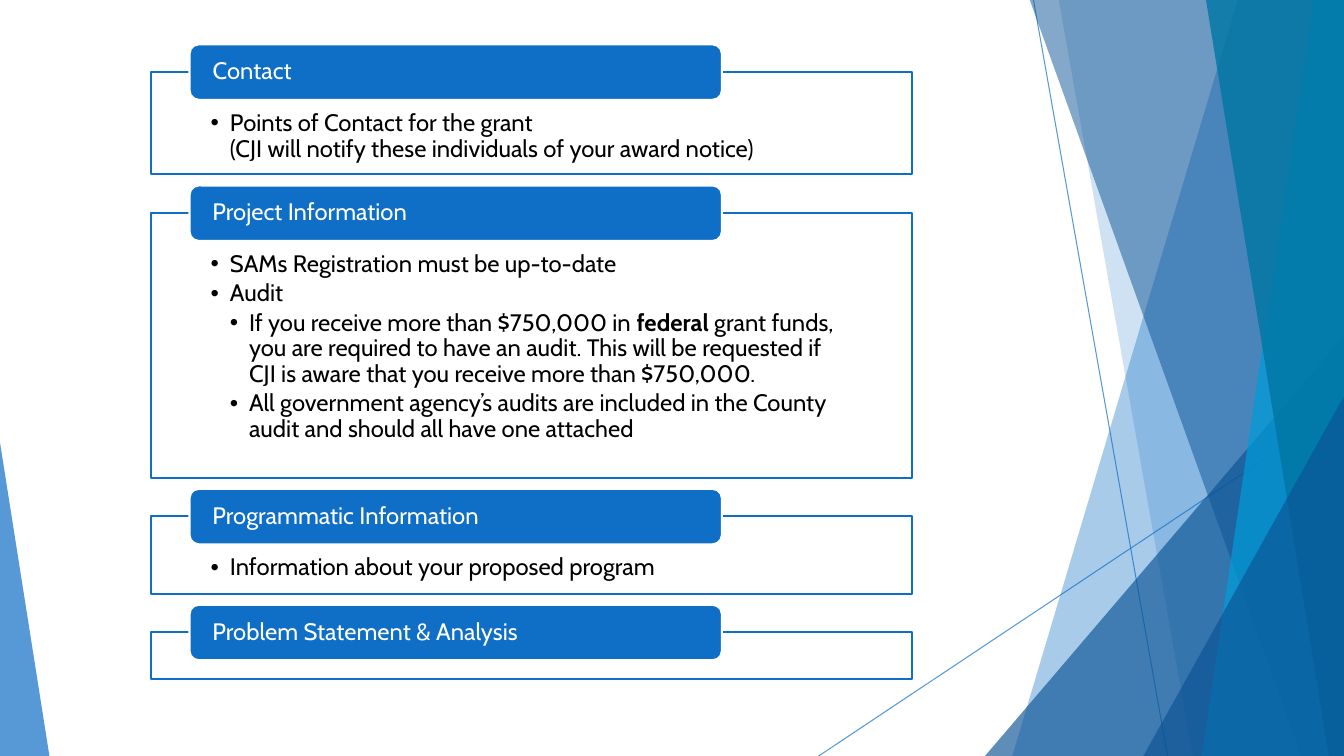
from dataclasses import dataclass
from typing import NamedTuple

from lxml.etree import SubElement as Sub
from pptx import Presentation
from pptx.dml.color import RGBColor as Rgb
from pptx.enum.shapes import MSO_CONNECTOR as Link, MSO_SHAPE as Form
from pptx.enum.text import MSO_ANCHOR as Anchor, MSO_AUTO_SIZE as Fit, PP_ALIGN as Align
from pptx.oxml.ns import qn
from pptx.util import Inches, Pt


@dataclass(frozen=True)
class Theme:
    font: str = "Cabin"
    size: float = 17
    blue: str = "0F6FC6"
    navy: str = "0B5394"
    cyan: str = "009DD9"
    teal: str = "0076A3"
    white: str = "FFFFFF"
    black: str = "000000"
    edge: float = 1.5
    thin: float = 0.75


class Ray(NamedTuple):
    start: tuple[float, float]
    end: tuple[float, float]


class Band(NamedTuple):
    top: float
    foot: float
    tone: str
    alpha: int


class Peak(NamedTuple):
    left: float
    top: float
    width: float
    lean: float
    tone: str
    alpha: int


class Item(NamedTuple):
    text: str
    level: int = 1


class Part(NamedTuple):
    head: str
    height: float
    items: tuple[Item, ...] = ()


THEME = Theme()
WIDE, HIGH = 13.33, 7.5
LEFT, SPAN = 1.5, 7.55
DROP, GAP, STEP = 0.27, 0.11, 0.19

RAYS = (Ray((10.25, 0), (11.58, HIGH)), Ray((WIDE, 4.03), (8.12, HIGH)))
ART = (
    Band(12.28, 10.04, THEME.blue, 36),
    Band(10.5, 11.83, THEME.blue, 20),
    Peak(9.77, 3.33, 3.56, 1, THEME.navy, 66),
    Band(10.21, 12.91, THEME.navy, 50),
    Band(13.03, 11.92, THEME.cyan, 70),
    Band(11.96, 13.18, THEME.teal, 80),
    Peak(11.34, 3.93, 1.99, 1, THEME.navy, 66),
    Peak(0, 4.39, 0.49, 0, THEME.blue, 70),
)
PARTS = (
    Part("Contact", 1.02, (
        Item("Points of Contact for the grant \n"
             "(CJI will notify these individuals of your award notice)"),
    )),
    Part("Project Information", 2.63, (
        Item("SAMs Registration must be up-to-date"),
        Item("Audit"),
        Item("If you receive more than $750,000 in *federal* grant funds, "
             "you are required to have an audit. This will be requested if "
             "CJI is aware that you receive more than $750,000.", 2),
        Item("All government agency’s audits are included in the County "
             "audit and should all have one attached", 2),
    )),
    Part("Programmatic Information", 0.77, (
        Item("Information about your proposed program"),
    )),
    Part("Problem Statement & Analysis", 0.47),
)


def fade(shape, alpha: int) -> None:
    tone = next(shape.element.spPr.iter(qn("a:srgbClr")))
    Sub(tone, qn("a:alpha"), val=str(alpha * 1000))


def place(shape, left: float, top: float, width: float, height: float) -> None:
    shape.left, shape.top = Inches(left), Inches(top)
    shape.width, shape.height = Inches(width), Inches(height)


def paint(shape, tone: str, alpha: int = 100, edge: str = "") -> None:
    shape.fill.solid()
    shape.fill.fore_color.rgb = Rgb.from_string(tone)
    if alpha < 100:
        fade(shape, alpha)
    if edge:
        shape.line.color.rgb = Rgb.from_string(edge)
        shape.line.width = Pt(THEME.edge)
    else:
        shape.line.fill.background()


def add_form(slide, form: Form, left: float, top: float, width: float, height: float):
    shape = slide.shapes.add_shape(
        form, Inches(left), Inches(top), Inches(width), Inches(height))
    shape.shadow.inherit = False
    return shape


def set_frame(shape, pads: tuple[float, ...], anchor: Anchor) -> None:
    frame = shape.text_frame
    frame.word_wrap = True
    frame.auto_size = Fit.NONE
    frame.vertical_anchor = anchor
    (frame.margin_left, frame.margin_top,
     frame.margin_right, frame.margin_bottom) = map(Inches, pads)


def write(para, text: str, *, tone: str, after: float, level: int = 0) -> None:
    para.alignment = Align.LEFT
    para.line_spacing = 0.9
    para.space_before = Pt(0)
    para.space_after = Pt(THEME.size * after)
    if level:
        para.level = level
        props = para._p.get_or_add_pPr()
        props.set("marL", str(Inches(STEP * level)))
        props.set("indent", str(-Inches(STEP)))
        Sub(props, qn("a:buFont"), typeface="Arial")
        Sub(props, qn("a:buChar"), char="•")
    for row, line in enumerate(text.split("\n")):
        if row:
            para.add_line_break()
        for place_no, chunk in enumerate(line.split("*")):
            run = para.add_run()
            run.text = chunk
            run.font.name = THEME.font
            run.font.size = Pt(THEME.size)
            run.font.bold = place_no % 2 == 1
            run.font.color.rgb = Rgb.from_string(tone)


def draw_ray(slide, ray: Ray) -> None:
    line = slide.shapes.add_connector(
        Link.STRAIGHT, *map(Inches, ray.start + ray.end))
    line.line.color.rgb = Rgb.from_string(THEME.blue)
    line.line.width = Pt(THEME.thin)
    fade(line, 70)
    Sub(line.element.spPr, qn("a:effectLst"))


def draw_band(slide, band: Band) -> None:
    pen = slide.shapes.build_freeform(Inches(band.top), Inches(-0.01))
    ends = ((WIDE, -0.01), (WIDE, HIGH), (band.foot, HIGH))
    pen.add_line_segments([(Inches(x), Inches(y)) for x, y in ends], close=True)
    shape = pen.convert_to_shape()
    shape.shadow.inherit = False
    paint(shape, band.tone, band.alpha)


def draw_peak(slide, peak: Peak) -> None:
    shape = add_form(slide, Form.ISOSCELES_TRIANGLE,
                     peak.left, peak.top, peak.width, HIGH - peak.top)
    shape.adjustments[0] = peak.lean
    paint(shape, peak.tone, peak.alpha)


def draw_part(slide, part: Part, top: float, title, bodies: list) -> None:
    area = (LEFT, top + DROP, SPAN, part.height)
    if part.items:
        box = bodies.pop(0)
        place(box, *area)
        set_frame(box, (0.59, 0.39, 0.59, 0.13), Anchor.TOP)
        for no, item in enumerate(part.items):
            para = box.text_frame.add_paragraph() if no else box.text_frame.paragraphs[0]
            write(para, item.text, tone=THEME.black, after=0.15, level=item.level)
    else:
        box = add_form(slide, Form.RECTANGLE, *area)
    paint(box, THEME.white, 90, THEME.blue)
    tab = add_form(slide, Form.ROUNDED_RECTANGLE, 1.88, top, 5.28, 0.55)
    paint(tab, THEME.blue, edge=THEME.white)
    label = tab
    if title is not None:
        label = title
        place(title, 1.91, top + 0.02, 5.23, 0.5)
        title.element.getparent().append(title.element)
    set_frame(label, (0.2, 0, 0.2, 0), Anchor.MIDDLE)
    write(label.text_frame.paragraphs[0], part.head, tone=THEME.white, after=0.35)


def main() -> None:
    deck = Presentation()
    deck.slide_width, deck.slide_height = Inches(WIDE), Inches(HIGH)
    slide = deck.slides.add_slide(deck.slide_layouts.get_by_name("Comparison"))
    title, *bodies = slide.placeholders
    for ray in RAYS:
        draw_ray(slide, ray)
    for piece in ART:
        (draw_band if isinstance(piece, Band) else draw_peak)(slide, piece)
    top = 0.44
    for no, part in enumerate(PARTS):
        draw_part(slide, part, top, None if no else title, bodies)
        top += DROP + part.height + GAP
    for spare in bodies:
        spare.element.getparent().remove(spare.element)
    deck.save("out.pptx")


if __name__ == "__main__":
    main()
